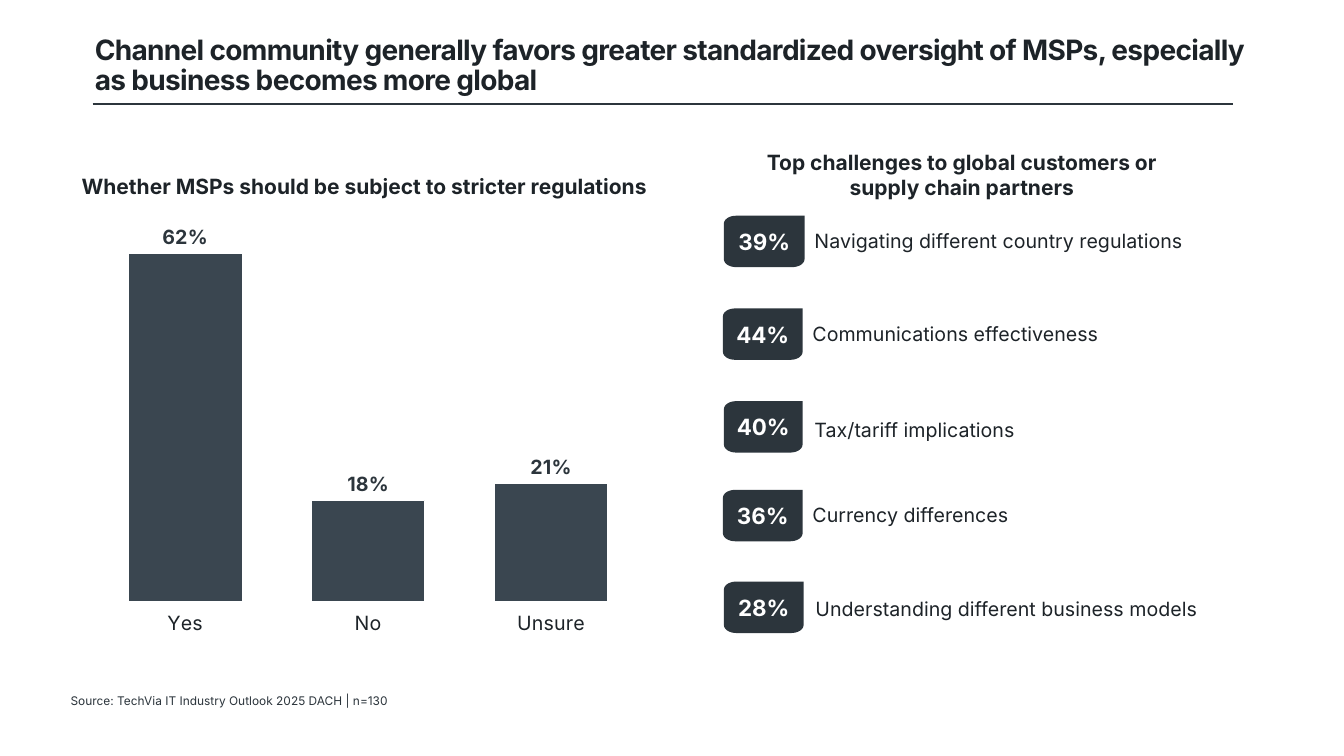
"""Build a slide on MSP regulation with a column chart and a list of challenges."""
import math

from pptx import Presentation
from pptx.chart.data import CategoryChartData
from pptx.dml.color import RGBColor
from pptx.enum.chart import XL_CHART_TYPE, XL_LABEL_POSITION, XL_TICK_MARK
from pptx.enum.shapes import MSO_CONNECTOR
from pptx.enum.text import MSO_ANCHOR, MSO_AUTO_SIZE, PP_ALIGN
from pptx.oxml import parse_xml
from pptx.oxml.ns import nsdecls, qn
from pptx.util import Inches, Pt

COLUMN = XL_CHART_TYPE.COLUMN_CLUSTERED
OUTSIDE_END = XL_LABEL_POSITION.OUTSIDE_END
TICK_OUT = XL_TICK_MARK.OUTSIDE
STRAIGHT = MSO_CONNECTOR.STRAIGHT
TOP, MIDDLE = MSO_ANCHOR.TOP, MSO_ANCHOR.MIDDLE
NO_FIT = MSO_AUTO_SIZE.NONE
LEFT, CENTER = PP_ALIGN.LEFT, PP_ALIGN.CENTER

INK, SLATE, BAR, WHITE = "1D2328", "2C353C", "3A4650", "FFFFFF"


def set_font(font, size, color, bold=False):
    font.name = "Inter"
    font.size = Pt(size)
    font.bold = bold
    font.color.rgb = RGBColor.from_string(color)


def write(tf, text, size, color, bold=False, align=LEFT, anchor=TOP, inset=True):
    tf.word_wrap = True
    tf.auto_size = NO_FIT
    tf.vertical_anchor = anchor
    if not inset:
        tf.margin_left = tf.margin_right = tf.margin_top = tf.margin_bottom = 0
    p = tf.paragraphs[0]
    p.alignment = align
    r = p.add_run()
    r.text = text
    set_font(r.font, size, color, bold)
    return r


prs = Presentation()
prs.slide_width, prs.slide_height = Inches(13.33), Inches(7.5)
s = prs.slides.add_slide(prs.slide_layouts[5])

title = s.shapes.title
title.left, title.top = Inches(0.84), Inches(0.31)
title.width, title.height = Inches(11.9), Inches(0.7)
r = write(title.text_frame,
          "Channel community generally favors greater standardized oversight of MSPs, "
          "especially as business becomes more global", 20, INK, True, anchor=MIDDLE)
r.font._element.set("spc", "-50")
title.text_frame.paragraphs[0].line_spacing = 0.9

rule = s.shapes.add_connector(STRAIGHT, Inches(0.92), Inches(1.03), Inches(12.23), Inches(1.03))
rule.line.color.rgb = RGBColor.from_string(SLATE)
rule.line.width = Pt(1)
rule._element.spPr.append(parse_xml(f"<a:effectLst {nsdecls('a')}/>"))

source = s.shapes.add_textbox(Inches(0.7), Inches(6.85), Inches(7), Inches(0.2))
write(source.text_frame, "Source: TechVia IT Industry Outlook 2025 DACH | n=130",
      8.5, SLATE, anchor=MIDDLE, inset=False)

headings = [
    ("Whether MSPs should be subject to stricter regulations", 0.7, 1.67, 5.83, 0.35),
    ("Top challenges to global customers or supply chain partners", 7.45, 1.43, 4.18, 0.61),
]
for text, *box in headings:
    sp = s.shapes.add_textbox(*map(Inches, box))
    write(sp.text_frame, text, 15, INK, True, CENTER)

data = CategoryChartData(number_format="0%")
data.categories = ["Yes", "No", "Unsure"]
data.add_series("Series 1", [0.62, 0.18, 0.21])
chart = s.shapes.add_chart(COLUMN, Inches(0.93), Inches(2.24), Inches(5.45), Inches(4.51), data).chart
chart.has_legend = False
chart.has_title = False
chart.font.name = "Roboto"
chart.font.size = Pt(18)
chart.font.color.rgb = RGBColor.from_string("586169")

axis = chart.category_axis
axis.major_tick_mark = TICK_OUT
axis.format.line.fill.background()
set_font(axis.tick_labels.font, 14, INK)
axis = chart.value_axis
axis.minimum_scale, axis.maximum_scale = 0, 0.64
axis.has_major_gridlines = False
axis.visible = False

plot = chart.plots[0]
plot.gap_width = 61
plot.vary_by_categories = False
series = plot.series[0]
series.format.fill.solid()
series.format.fill.fore_color.rgb = RGBColor.from_string(BAR)
series.format.line.color.rgb = RGBColor.from_string(WHITE)
series.format.line.width = Pt(0.75)
labels = series.data_labels
labels.show_value = True
labels.position = OUTSIDE_END
labels.number_format = "0%"
labels.number_format_is_linked = False
set_font(labels.font, 14, SLATE, True)

area = chart._chartSpace.chart.plotArea
for layout in area.findall(qn("c:layout")):
    area.remove(layout)
area.insert(0, parse_xml(
    f'<c:layout {nsdecls("c")}><c:manualLayout><c:layoutTarget val="inner"/>'
    '<c:xMode val="edge"/><c:yMode val="edge"/><c:x val="0"/><c:y val="0.035"/>'
    '<c:w val="0.999"/><c:h val="0.791"/></c:manualLayout></c:layout>'))

BADGE_H, RX, RY = 0.51, 0.12, 0.08
challenges = [
    ("39%", "Navigating different country regulations", 7.18, 2.14, 0.8, 7.98, 2.22),
    ("44%", "Communications effectiveness", 7.17, 3.06, 0.79, 7.96, 3.14),
    ("40%", "Tax/tariff implications", 7.18, 3.98, 0.78, 7.98, 4.1),
    ("36%", "Currency differences", 7.17, 4.86, 0.79, 7.96, 4.94),
    ("28%", "Understanding different business models", 7.18, 5.77, 0.79, 7.99, 5.87),
]
for share, text, x, y, w, text_x, text_y in challenges:
    right, bottom = x + w, y + BADGE_H
    corners = [(right - RX, bottom - RY, 0), (x + RX, bottom - RY, 90), (x + RX, y + RY, 180)]
    points = [(Inches(cx + RX * math.cos(math.radians(start + step))),
               Inches(cy + RY * math.sin(math.radians(start + step))))
              for cx, cy, start in corners for step in range(0, 91, 10)]
    outline = s.shapes.build_freeform(Inches(right), Inches(y))
    outline.add_line_segments(points, close=True)
    badge = outline.convert_to_shape()
    badge.shadow.inherit = False
    badge.fill.solid()
    badge.fill.fore_color.rgb = RGBColor.from_string(SLATE)
    badge.line.fill.background()
    write(badge.text_frame, share, 16, WHITE, True, CENTER, MIDDLE, inset=False)
    sp = s.shapes.add_textbox(Inches(text_x), Inches(text_y), Inches(4.2), Inches(0.34))
    write(sp.text_frame, text, 14, INK)

prs.save("out.pptx")
